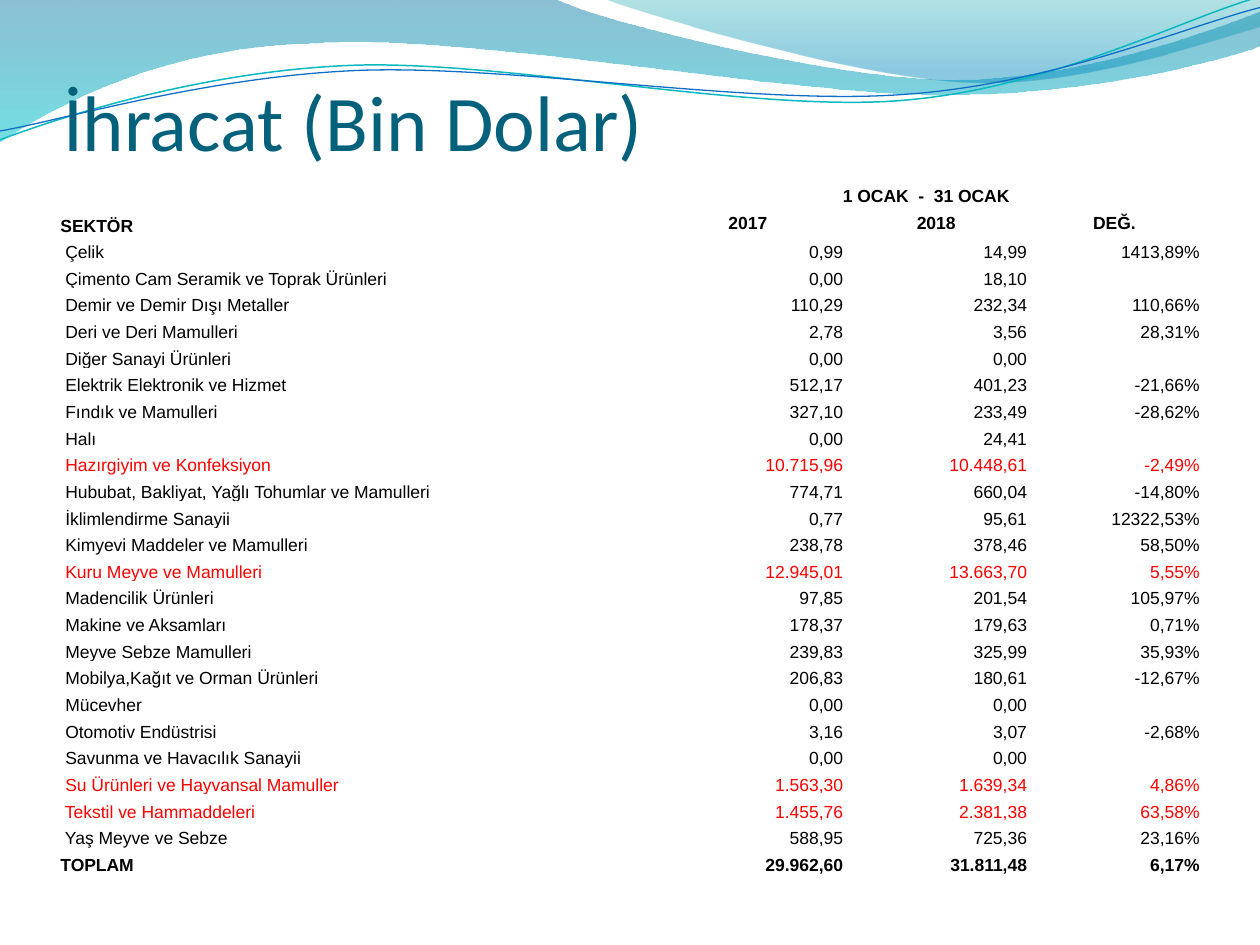
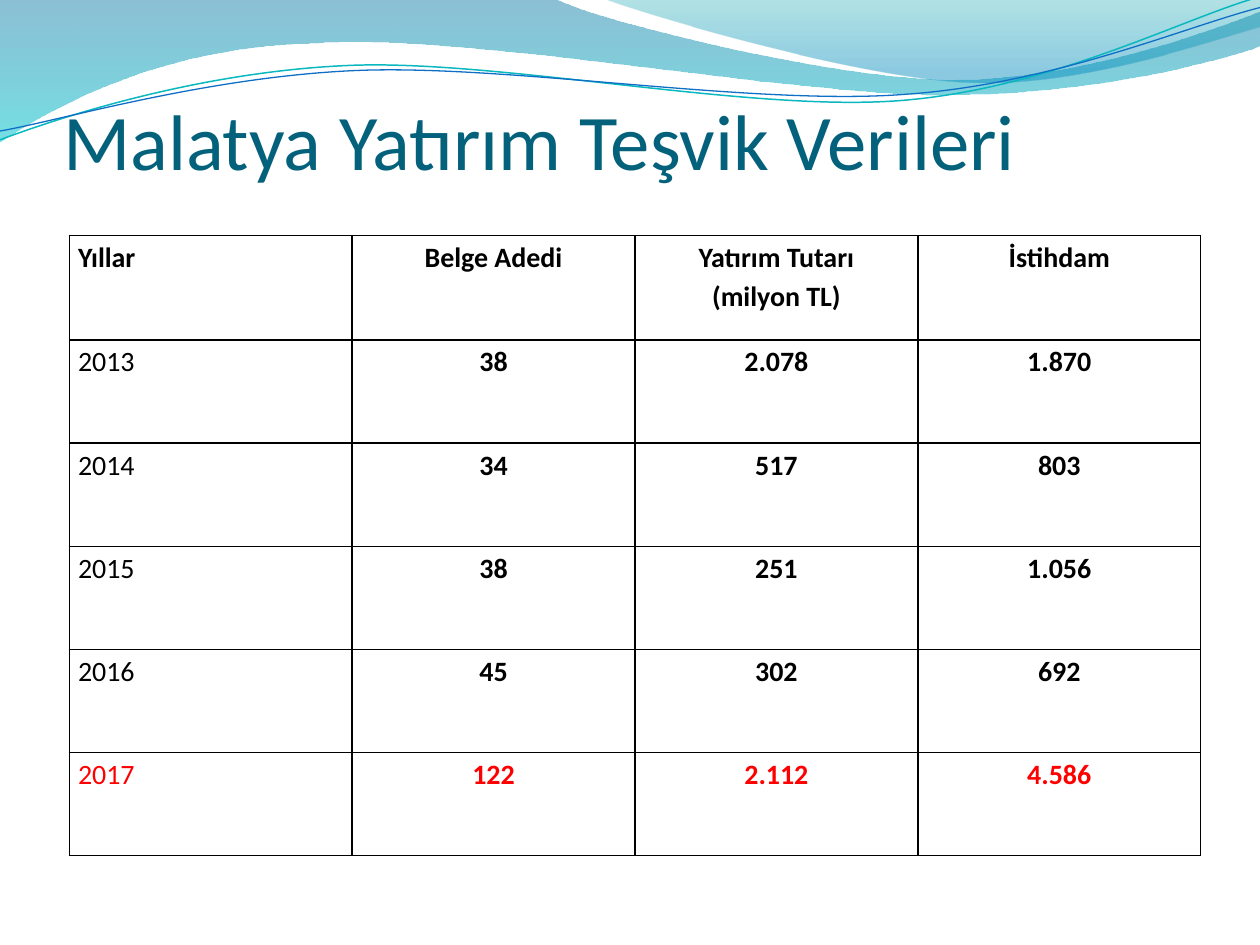
from dataclasses import dataclass, replace
from typing import Any

from lxml.etree import SubElement
from pptx import Presentation
from pptx.dml.color import RGBColor
from pptx.enum.text import MSO_ANCHOR, MSO_AUTO_SIZE, PP_ALIGN
from pptx.oxml.ns import qn
from pptx.util import Inches, Pt

COLORS = {
    "title": "04617B",
    "text": "000000",
    "highlight": "FF0000",
    "band_blue": "0074A1",
    "band_cyan": "00C6CF",
    "crest_teal": "00A1A9",
    "crest_blue": "008BBF",
    "line_teal": "0AB8BF",
    "line_blue": "0F6FC6",
}


@dataclass(frozen=True)
class GradientStop:
    position: float
    color: str
    opacity: int


@dataclass(frozen=True)
class Wave:
    """Segments hold one point for a line, or three points for a curve."""
    start: tuple[float, float]
    segments: tuple[tuple[float, ...], ...]
    stops: tuple[GradientStop, ...] = ()
    line_color: str = ""
    line_width: float = 0


@dataclass(frozen=True)
class CellStyle:
    font: str
    size: int
    color: str = "text"
    bold: bool = False
    align: PP_ALIGN = PP_ALIGN.LEFT
    anchor: MSO_ANCHOR = MSO_ANCHOR.TOP
    side_margin: float = 0.01
    top_margin: float = 0.01
    spacing: float | None = None
    border: float = 0


@dataclass(frozen=True)
class TableCell:
    text: str
    style: CellStyle


@dataclass(frozen=True)
class TablePlan:
    left: float
    top: float
    height: float
    header_height: float
    columns: tuple[float, ...]
    rows: list[list[TableCell]]


WAVES = (
    Wave((0, 0), (
        (4.4, -0.01),
        (4.76, 0.17, 6.64, 0.63, 7.58, 0.63),
        (8.53, 0.63, 9.58, 0.26, 10, 0.09),
        (10.01, 0.36),
        (9.83, 0.44, 8.7, 0.76, 7.46, 0.75),
        (6.22, 0.75, 3.82, 0.28, 2.57, 0.34),
        (1.29, 0.36, 0.46, 0.83, -0.01, 1.13),
        (0, 0),
    ), stops=(GradientStop(0, "band_blue", 45), GradientStop(1, "band_cyan", 55))),
    Wave((4.79, -0.01), (
        (5.09, 0.11, 6.82, 0.62, 7.69, 0.65),
        (8.56, 0.69, 9.61, 0.32, 10, 0.21),
        (10, 0),
        (4.79, -0.01),
    ), stops=(GradientStop(0, "crest_teal", 30), GradientStop(0.8, "crest_blue", 45))),
    Wave((0, 1.11), (
        (0.48, 0.93, 1.58, 0.57, 2.77, 0.52),
        (3.95, 0.47, 5.93, 0.89, 7.13, 0.8),
        (8.33, 0.71, 9.38, 0.15, 9.98, -0.02),
    ), line_color="line_teal", line_width=0.85),
    Wave((0, 1.04), (
        (0.47, 0.96, 1.64, 0.61, 2.83, 0.56),
        (4.03, 0.51, 5.97, 0.84, 7.17, 0.75),
        (8.36, 0.67, 9.41, 0.21, 10, 0.06),
    ), line_color="line_blue", line_width=0.75),
)

EXPORTS = (
    ("Çelik", "0,99", "14,99", "1413,89%"),
    ("Çimento Cam Seramik ve Toprak Ürünleri", "0,00", "18,10", ""),
    ("Demir ve Demir Dışı Metaller", "110,29", "232,34", "110,66%"),
    ("Deri ve Deri Mamulleri", "2,78", "3,56", "28,31%"),
    ("Diğer Sanayi Ürünleri", "0,00", "0,00", ""),
    ("Elektrik Elektronik ve Hizmet", "512,17", "401,23", "-21,66%"),
    ("Fındık ve Mamulleri", "327,10", "233,49", "-28,62%"),
    ("Halı", "0,00", "24,41", ""),
    ("Hazırgiyim ve Konfeksiyon", "10.715,96", "10.448,61", "-2,49%"),
    ("Hububat, Bakliyat, Yağlı Tohumlar ve Mamulleri", "774,71", "660,04", "-14,80%"),
    ("İklimlendirme Sanayii", "0,77", "95,61", "12322,53%"),
    ("Kimyevi Maddeler ve Mamulleri", "238,78", "378,46", "58,50%"),
    ("Kuru Meyve ve Mamulleri", "12.945,01", "13.663,70", "5,55%"),
    ("Madencilik Ürünleri", "97,85", "201,54", "105,97%"),
    ("Makine ve Aksamları", "178,37", "179,63", "0,71%"),
    ("Meyve Sebze Mamulleri", "239,83", "325,99", "35,93%"),
    ("Mobilya,Kağıt ve Orman Ürünleri", "206,83", "180,61", "-12,67%"),
    ("Mücevher", "0,00", "0,00", ""),
    ("Otomotiv Endüstrisi", "3,16", "3,07", "-2,68%"),
    ("Savunma ve Havacılık Sanayii", "0,00", "0,00", ""),
    ("Su Ürünleri ve Hayvansal Mamuller", "1.563,30", "1.639,34", "4,86%"),
    ("Tekstil ve Hammaddeleri", "1.455,76", "2.381,38", "63,58%"),
    ("Yaş Meyve ve Sebze", "588,95", "725,36", "23,16%"),
)
EXPORT_TOTAL = ("TOPLAM", "29.962,60", "31.811,48", "6,17%")

INVESTMENT_HEADER = ("Yıllar", "Belge Adedi", "Yatırım Tutarı\n(milyon TL)", "İstihdam")
INVESTMENTS = (
    ("2013", "38", "2.078", "1.870"),
    ("2014", "34", "517", "803"),
    ("2015", "38", "251", "1.056"),
    ("2016", "45", "302", "692"),
    ("2017", "122", "2.112", "4.586"),
)


def rgb(name: str) -> RGBColor:
    return RGBColor.from_string(COLORS[name])


def set_values(target: Any, values: dict[str, Any]) -> None:
    for name, value in values.items():
        setattr(target, name, value)


# Wave header
def bend_segments(shape: Any, wave: Wave) -> None:
    """Turn each group of three straight steps into one cubic curve."""
    steps = iter(shape.element.findall(".//" + qn("a:lnTo")))
    for segment in wave.segments:
        group = [next(steps) for _ in segment[::2]]
        if len(group) == 1:
            continue
        outline = group[0].getparent()
        curve = SubElement(outline, qn("a:cubicBezTo"))
        group[0].addprevious(curve)
        for step in group:
            curve.append(step[0])
            outline.remove(step)


def draw_wave(page: Any, wave: Wave) -> Any:
    points = [(Inches(x), Inches(y)) for segment in wave.segments
              for x, y in zip(segment[::2], segment[1::2])]
    builder = page.shapes.build_freeform(*map(Inches, wave.start), scale=1.0)
    builder.add_line_segments(points, close=bool(wave.stops))
    shape = builder.convert_to_shape()
    bend_segments(shape, wave)
    shape.shadow.inherit = False
    if not wave.stops:
        shape.fill.background()
        shape.line.color.rgb = rgb(wave.line_color)
        shape.line.width = Pt(wave.line_width)
        return shape
    shape.line.fill.background()
    shape.fill.gradient()
    shape.fill.gradient_angle = 270
    for gradient_stop, stop in zip(shape.fill.gradient_stops, wave.stops):
        gradient_stop.color.rgb = rgb(stop.color)
        gradient_stop.position = stop.position
    for color, stop in zip(shape.element.iter(qn("a:srgbClr")), wave.stops):
        SubElement(color, qn("a:alpha"), val=str(stop.opacity * 1000))
    return shape


def add_waves_to_layout(page: Any) -> None:
    for wave in WAVES:
        page.slide_layout.shapes.element.append(draw_wave(page, wave).element)


# Title
def write_title(page: Any, text: str, height: float) -> None:
    title = page.shapes.title
    set_values(title, {"left": Inches(0.5), "top": Inches(0.77),
                       "width": Inches(9.08), "height": Inches(height)})
    frame = title.text_frame
    frame.text = text
    set_values(frame, {"margin_left": 0, "margin_top": Inches(0.05), "margin_right": 0,
                       "margin_bottom": 0, "vertical_anchor": MSO_ANCHOR.BOTTOM,
                       "auto_size": MSO_AUTO_SIZE.NONE, "word_wrap": True})
    para = frame.paragraphs[0]
    para.alignment = PP_ALIGN.LEFT
    span = para.runs[0]
    set_values(span.font, {"name": "Calibri", "size": Pt(45), "bold": False})
    span.font.color.rgb = rgb("title")


# Tables
def add_borders(cell: Any, width: float) -> None:
    properties = cell._tc.get_or_add_tcPr()
    for side in ("lnL", "lnR", "lnT", "lnB"):
        line = SubElement(properties, qn(f"a:{side}"), w=str(Pt(width)))
        fill = SubElement(line, qn("a:solidFill"))
        SubElement(fill, qn("a:srgbClr"), val=COLORS["text"])


def write_cell(cell: Any, content: TableCell) -> None:
    style = content.style
    if style.border:
        add_borders(cell, style.border)
    cell.fill.background()
    set_values(cell, {"margin_left": Inches(style.side_margin),
                      "margin_right": Inches(style.side_margin),
                      "margin_top": Inches(style.top_margin), "margin_bottom": 0,
                      "vertical_anchor": style.anchor})
    if not content.text:
        # Keeps an empty cell from stretching its row
        SubElement(cell._tc.find(".//" + qn("a:p")), qn("a:endParaRPr"),
                   sz=str(style.size * 100))
        return
    cell.text_frame.text = content.text
    for para in cell.text_frame.paragraphs:
        set_values(para, {"alignment": style.align, "line_spacing": style.spacing})
        for span in para.runs:
            set_values(span.font, {"name": style.font, "size": Pt(style.size),
                                   "bold": style.bold})
            span.font.color.rgb = rgb(style.color)


def draw_table(page: Any, plan: TablePlan) -> Any:
    table = page.shapes.add_table(
        len(plan.rows), len(plan.columns), Inches(plan.left), Inches(plan.top),
        Inches(sum(plan.columns)), Inches(plan.height)).table
    set_values(table, {"first_row": False, "horz_banding": False})
    for column, width in zip(table.columns, plan.columns):
        column.width = Inches(width)
    body_height = (plan.height - plan.header_height) / (len(plan.rows) - 1)
    for row_index, contents in enumerate(plan.rows):
        table.rows[row_index].height = Inches(body_height if row_index else plan.header_height)
        for column_index, content in enumerate(contents):
            write_cell(table.cell(row_index, column_index), content)
    return table


def make_row(texts: tuple[str, ...], first: CellStyle, others: CellStyle) -> list[TableCell]:
    return [TableCell(text, others if index else first) for index, text in enumerate(texts)]


def export_rows() -> list[list[TableCell]]:
    label = CellStyle("Arial", 10, anchor=MSO_ANCHOR.BOTTOM)
    number = replace(label, align=PP_ALIGN.RIGHT)
    bold_label = replace(label, bold=True)
    heading = replace(bold_label, align=PP_ALIGN.CENTER, anchor=MSO_ANCHOR.MIDDLE)
    rows = [make_row(("", "1 OCAK  -  31 OCAK", "", ""), bold_label, heading),
            make_row(("SEKTÖR", "2017", "2018", "DEĞ."), bold_label, heading)]
    for sector, *values in EXPORTS:
        # Sectors that reach a thousand stand out
        color = "highlight" if "." in values[1] else "text"
        rows.append(make_row((f" {sector}", *values),
                             replace(label, color=color), replace(number, color=color)))
    rows.append(make_row(EXPORT_TOTAL, bold_label, replace(number, bold=True)))
    return rows


def investment_rows() -> list[list[TableCell]]:
    year = CellStyle("Calibri", 16, side_margin=0.07, top_margin=0, spacing=1.15, border=1)
    number = replace(year, bold=True, align=PP_ALIGN.CENTER)
    rows = [make_row(INVESTMENT_HEADER, replace(year, bold=True), number)]
    for record in INVESTMENTS:
        color = "highlight" if record is INVESTMENTS[-1] else "text"
        rows.append(make_row(record, replace(year, color=color), replace(number, color=color)))
    return rows


def main() -> None:
    deck = Presentation()
    set_values(deck, {"slide_width": Inches(10), "slide_height": Inches(7.5)})
    layout = deck.slide_layouts[5]

    # Exports by sector
    page = deck.slides.add_slide(layout)
    add_waves_to_layout(page)
    write_title(page, "İhracat (Bin Dolar)", 0.56)
    table = draw_table(page, TablePlan(0.47, 1.45, 5.5, 0.21, (4.7, 1.53, 1.46, 1.37),
                                       export_rows()))
    table.cell(0, 1).merge(table.cell(0, 3))

    # Investment incentives by year
    page = deck.slides.add_slide(layout)
    write_title(page, "Malatya Yatırım Teşvik Verileri", 0.71)
    draw_table(page, TablePlan(0.55, 1.87, 4.92, 0.83, (8.98 / 4,) * 4, investment_rows()))

    deck.save("out.pptx")


if __name__ == "__main__":
    main()
